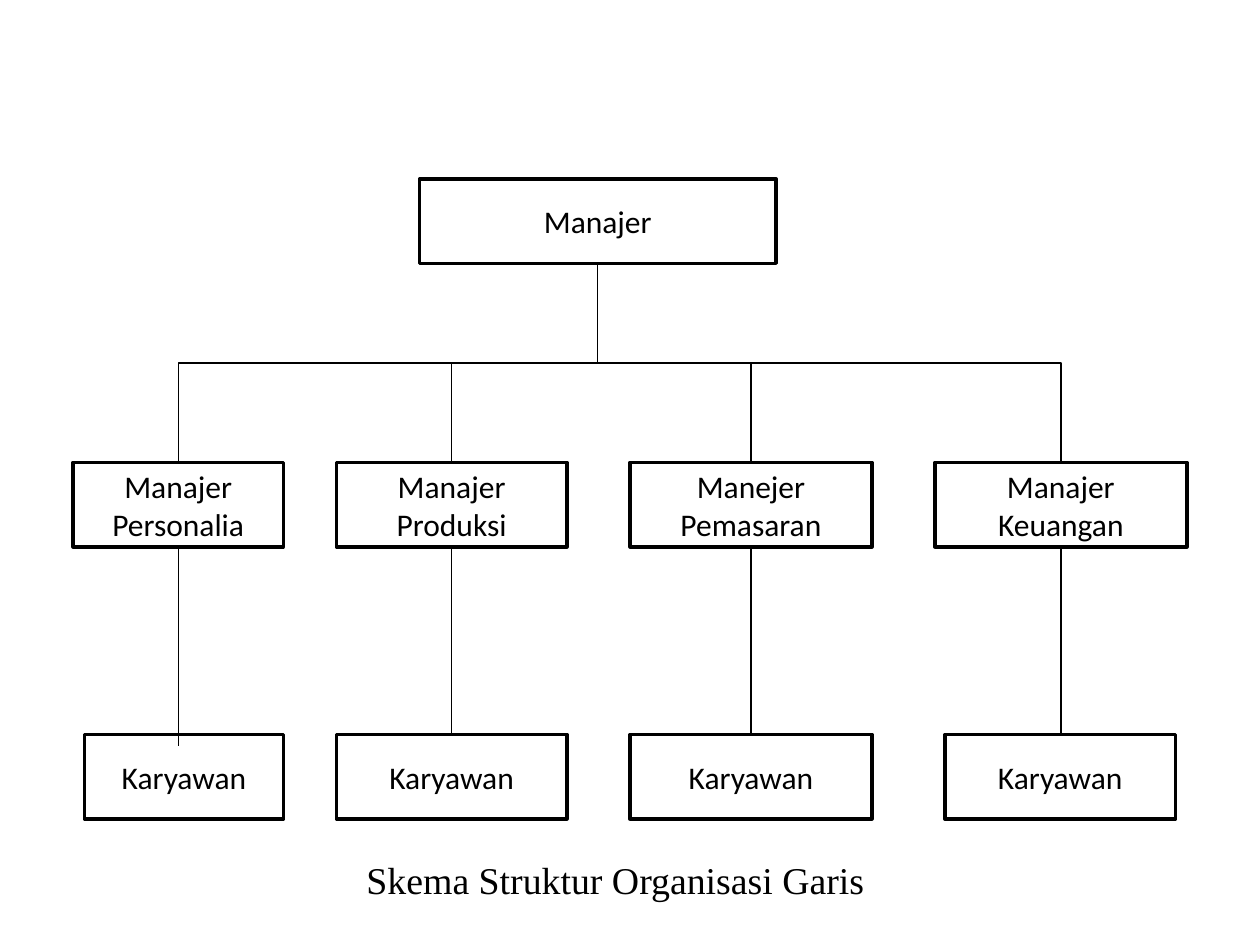
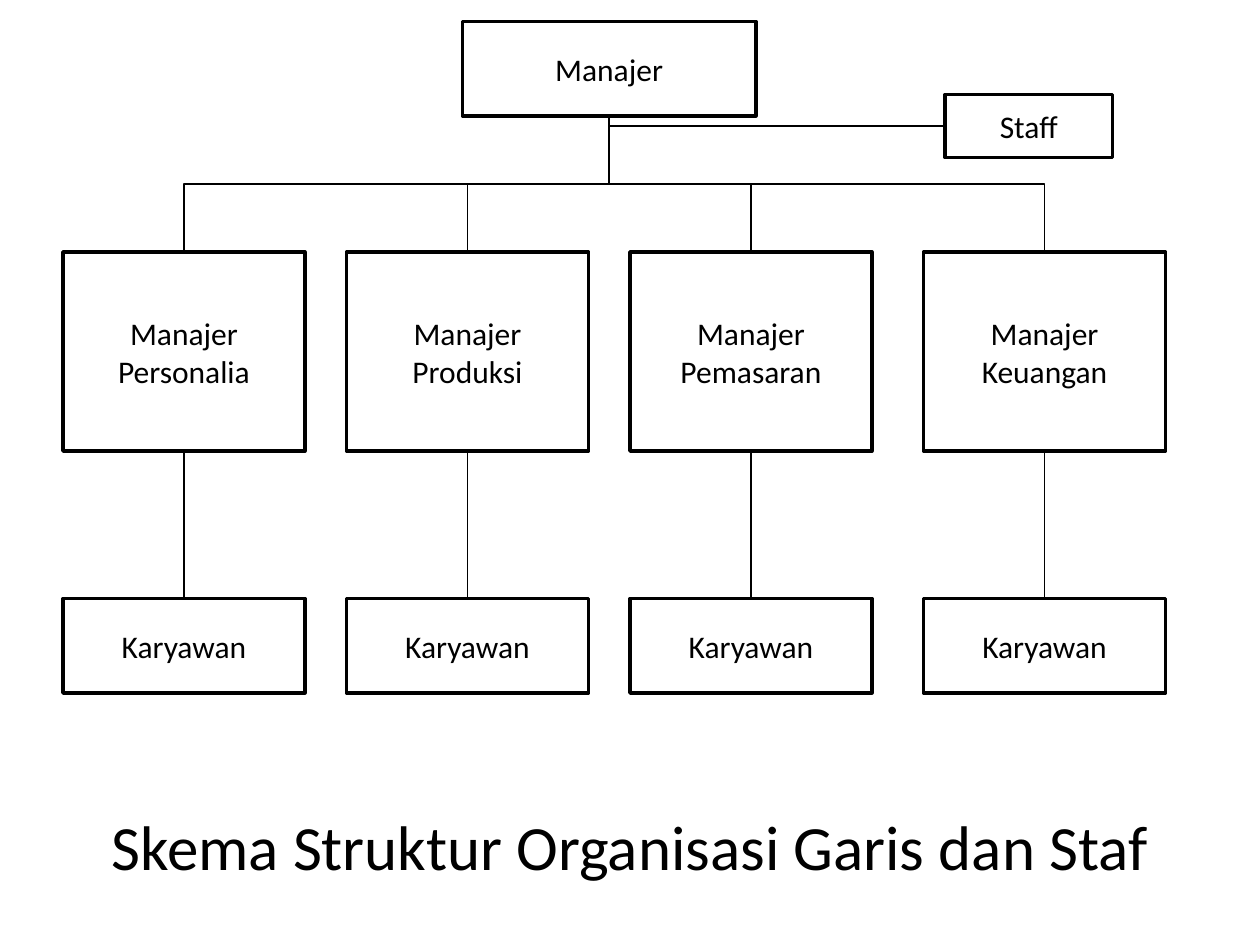
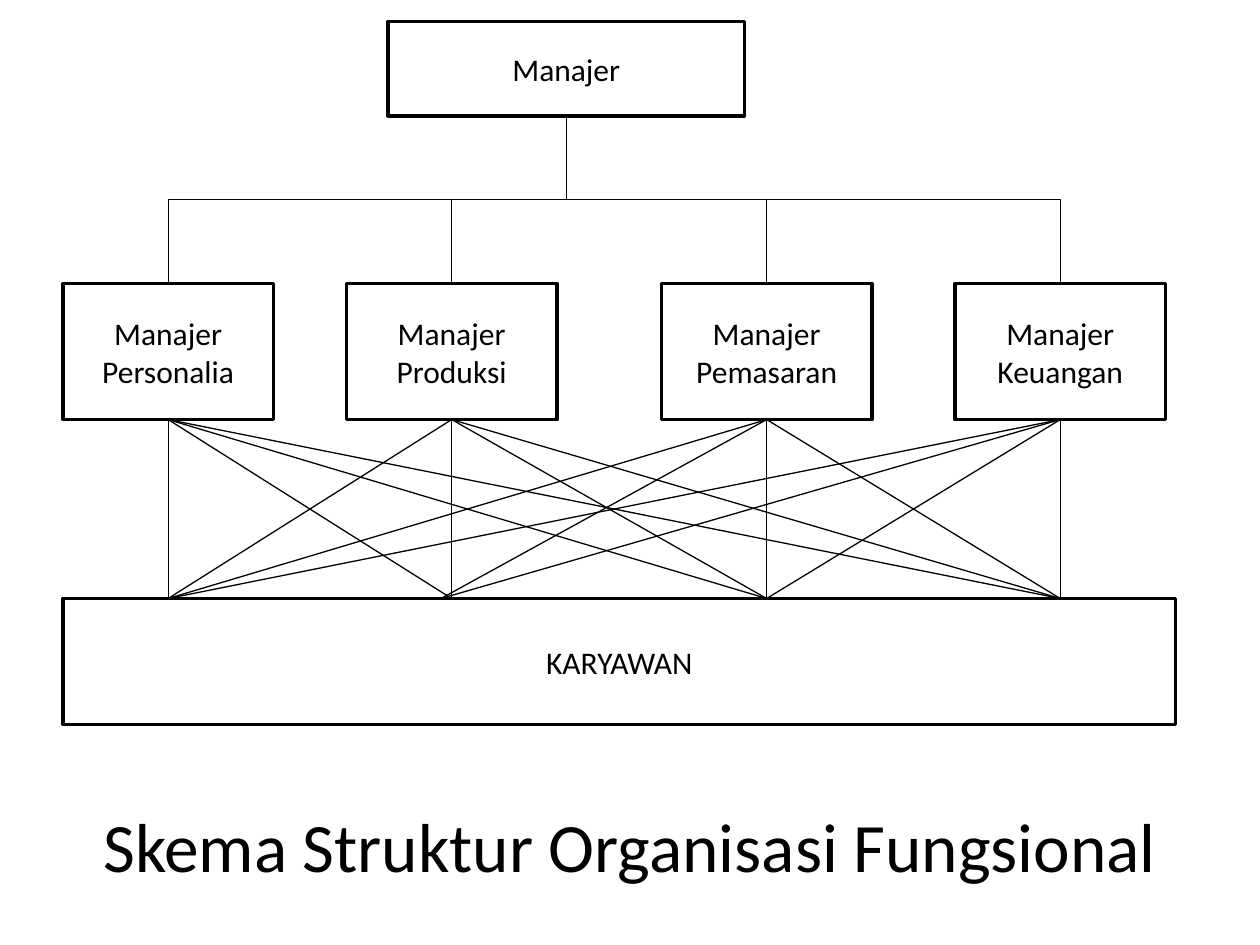
from itertools import product
from lxml import etree
from pptx import Presentation
from pptx import util as u
from pptx.dml.color import RGBColor
from pptx.enum import shapes, text
from pptx.oxml.ns import qn

Inches = u.Inches
COLORS = {"ink": "000000", "paper": "FFFFFF"}
FONT = "Calibri"

# Content: boxes are (left, top, width, height); columns are (left, width)
CAPTION_BOX = (0.5, 6.08, 9, 1.25)
MANAGER = "Manajer"
WORKER = "Karyawan"
DIVISIONS = ["Personalia", "Produksi", "Pemasaran", "Keuangan"]

LINE_CHART = {
    "caption": ("Skema Struktur Organisasi Garis", (0.25, 6.6, 9.27, 0.75), 21.6, "Times New Roman"),
    "manager": (3.33, 1.42, 2.83, 0.67),
    "titles": ["Manajer", "Manajer", "Manejer", "Manajer"],
    "divisions": (3.67, 0.67, [(0.58, 1.67), (2.67, 1.83), (5, 1.92), (7.42, 2)]),
    "workers": (5.83, 0.67, [(0.67, 1.58), (2.67, 1.83), (5, 1.92), (7.5, 1.83)]),
    "line_ends": [5.92, 5.83, 5.83, 5.83],
}
STAFF_COLUMNS = [(left, 1.92) for left in (0.5, 2.75, 5, 7.33)]
STAFF_CHART = {
    "caption": ("Skema Struktur Organisasi Garis dan Staf", CAPTION_BOX, 36, FONT),
    "manager": (3.67, 0.17, 2.33, 0.75),
    "titles": [MANAGER] * 4,
    "divisions": (2, 1.58, STAFF_COLUMNS),
    "workers": (4.75, 0.75, STAFF_COLUMNS),
    "line_ends": [4.75] * 4,
    "staff": ("Staff", (7.5, 0.75, 1.33, 0.5)),
}
FUNCTIONAL_CHART = {
    "caption": ("Skema Struktur Organisasi Fungsional", CAPTION_BOX, 39.6, FONT),
    "manager": (3.08, 0.17, 2.83, 0.75),
    "titles": [MANAGER] * 4,
    "divisions": (2.25, 1.08, [(left, 1.67) for left in (0.5, 2.75, 5.25, 7.58)]),
    "shared_workers": ("KARYAWAN", (0.5, 4.75, 8.83, 1)),
}


def color(name):
    return RGBColor.from_string(COLORS[name])


def write(frame, lines, size, font):
    frame.word_wrap = True
    frame.vertical_anchor = text.MSO_ANCHOR.MIDDLE
    for i, line in enumerate(lines):
        paragraph = frame.paragraphs[0] if i == 0 else frame.add_paragraph()
        paragraph.alignment = text.PP_ALIGN.CENTER
        run = paragraph.add_run()
        run.text = line
        run.font.size = u.Pt(size)
        run.font.name = font
        run.font.color.rgb = color("ink")


def add_box(slide, place, *lines):
    box = slide.shapes.add_shape(shapes.MSO_SHAPE.RECTANGLE, *map(Inches, place))
    box.shadow.inherit = False
    box.fill.solid()
    box.fill.fore_color.rgb = color("paper")
    box.line.color.rgb = color("ink")
    box.line.width = u.Pt(2)
    write(box.text_frame, lines, 18, FONT)


def add_line(slide, start, end, kind=shapes.MSO_CONNECTOR.STRAIGHT):
    line = slide.shapes.add_connector(kind, *map(Inches, (*start, *end)))
    line.line.color.rgb = color("ink")
    line.line.width = u.Pt(0.75)
    etree.SubElement(line._element.spPr, qn("a:effectLst"))
    return line


def add_elbow(slide, start, end, preset="bentConnector3"):
    """Connector that leaves its start downwards: a quarter-turned elbow."""
    (x1, y1), (x2, y2) = start, end
    mid_x, mid_y = (x1 + x2) / 2, (y1 + y2) / 2
    half_w, half_h = (y2 - y1) / 2, abs(x2 - x1) / 2
    elbow = add_line(slide, (mid_x - half_w, mid_y - half_h),
                     (mid_x + half_w, mid_y + half_h), shapes.MSO_CONNECTOR.ELBOW)
    properties = elbow._element.spPr
    frame = properties.find(qn("a:xfrm"))
    frame.set("rot", str((270 if x2 > x1 else 90) * 60000))
    if x2 > x1:
        frame.set("flipH", "1")
    properties.find(qn("a:prstGeom")).set("prst", preset)


def bottom_center(place):
    left, top, width, height = place
    return left + width / 2, top + height


def build_chart(prs, chart):
    slide = prs.slides.add_slide(prs.slide_layouts[6])
    caption, place, size, font = chart["caption"]
    write(slide.shapes.add_textbox(*map(Inches, place)).text_frame, [caption], size, font)

    # Manager and divisions
    add_box(slide, chart["manager"], MANAGER)
    trunk = bottom_center(chart["manager"])
    top, height, columns = chart["divisions"]
    centers = [left + width / 2 for left, width in columns]
    for (left, width), center, title, division in zip(columns, centers, chart["titles"], DIVISIONS):
        add_box(slide, (left, top, width, height), title, division)
        add_elbow(slide, trunk, (center, top))
    division_foot = top + height

    # One worker box below each division
    if "workers" in chart:
        top, height, columns = chart["workers"]
        for (left, width), center, line_end in zip(columns, centers, chart["line_ends"]):
            add_box(slide, (left, top, width, height), WORKER)
            add_line(slide, (center, division_foot), (center, line_end))

    # Staff beside the trunk
    if "staff" in chart:
        label, place = chart["staff"]
        add_box(slide, place, label)
        add_elbow(slide, trunk, (place[0], place[1] + place[3] / 2), "bentConnector2")

    # Every division leads every worker group
    if "shared_workers" in chart:
        label, place = chart["shared_workers"]
        add_box(slide, place, label)
        for source, target in product(range(4), repeat=2):
            landing = 3.5 if target == 1 and source > 1 else centers[target]
            add_line(slide, (centers[source], division_foot), (landing, place[1]))


def main():
    prs = Presentation()
    prs.slide_width, prs.slide_height = Inches(10), Inches(7.5)
    for chart in (LINE_CHART, STAFF_CHART, FUNCTIONAL_CHART):
        build_chart(prs, chart)
    prs.save("out.pptx")


if __name__ == "__main__":
    main()
